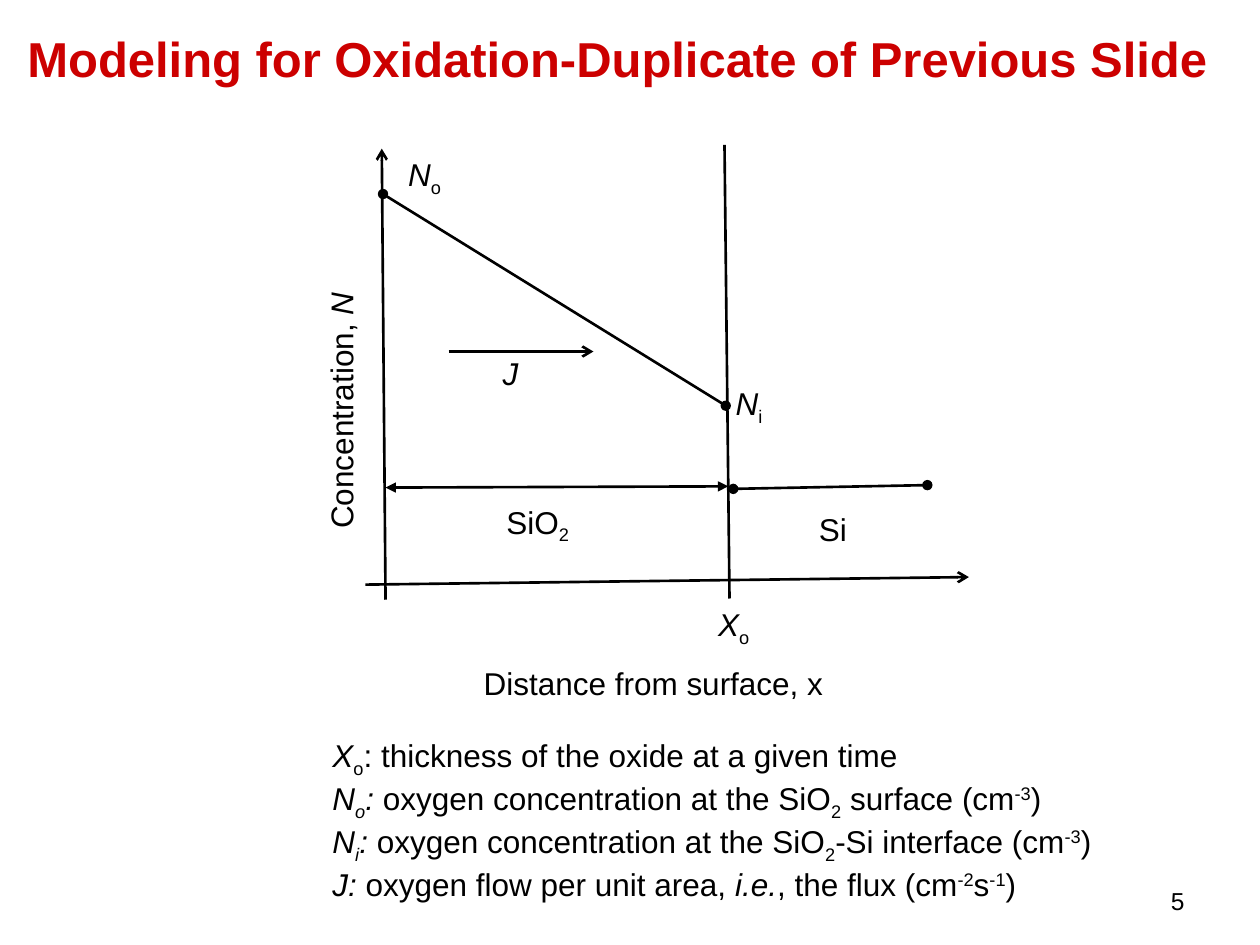
from lxml import etree
from pptx import Presentation
from pptx.dml.color import RGBColor
from pptx.enum import shapes, text
from pptx.oxml import ns
from pptx.util import Inches, Pt

BLACK, RED = "000000", "CC0000"
LEFT, CENTER, RIGHT = text.PP_ALIGN.LEFT, text.PP_ALIGN.CENTER, text.PP_ALIGN.RIGHT
BASELINES = {"_": "-25000", "^": "30000"}

TITLE = [[("Modeling for Oxidation-Duplicate of Previous Slide", "b")]]
PAGE = [[("5", "")]]

LINES = [
    ((2.9, 4.64), (7.69, 4.58), None, "arrow"),
    ((3.06, 4.76), (3.03, 1.18), None, "arrow"),
    ((5.75, 1.15), (5.79, 4.75), None, None),
    ((3.06, 3.87), (5.78, 3.86), "triangle", "triangle"),
    ((5.82, 3.88), (7.36, 3.85), "oval", "oval"),
    ((3.04, 1.54), (5.76, 3.22), "oval", "oval"),
    ((3.56, 2.79), (4.71, 2.79), None, "arrow"),
]

LABELS = [
    ((1.6, 2.99, 2.21, 0.4), [("Concentration, ", ""), ("N", "i")], 270),
    ((3.14, 1.18, 0.51, 0.42), [("N", "i"), ("o", "_")], 0),
    ((5.74, 3, 0.51, 0.42), [("N", "i"), ("i", "_")], 0),
    ((3.92, 3.94, 0.86, 0.4), [("SiO", ""), ("2", "_")], 0),
    ((6.4, 4, 0.49, 0.4), [("Si", "")], 0),
    ((3.89, 2.76, 0.51, 0.42), [("J", "i")], 0),
    ((5.6, 4.75, 0.51, 0.42), [("X", "i"), ("o", "_")], 0),
    ((3.74, 5.22, 3.89, 0.4), [("Distance from surface, x", "")], 0),
]

DEFINITIONS = [
    [("X", "i"), ("o", "_"), (": thickness of the oxide at a given time", "")],
    [("N", "i"), ("o", "i_"), (": ", "i"), ("oxygen concentration at the SiO", ""),
     ("2", "_"), (" surface (cm", ""), ("-3", "^"), (")", "")],
    [("N", "i"), ("i", "i_"), (": ", "i"), ("oxygen concentration at the SiO", ""),
     ("2", "_"), ("-Si interface (cm", ""), ("-3", "^"), (")", "")],
    [("J: ", "i"), ("oxygen flow per unit area, ", ""), ("i.e.", "i"),
     (", the flux (cm", ""), ("-2", "^"), ("s", ""), ("-1", "^"), (")", "")],
]


def rgb(color):
    return RGBColor.from_string(color)


def add_text(s, box, paragraphs, size=18, color=BLACK, align=LEFT,
             anchor=text.MSO_ANCHOR.TOP, rotation=0):
    sp = s.shapes.add_textbox(*map(Inches, box))
    sp.rotation = rotation
    tf = sp.text_frame
    tf.word_wrap = True
    tf.vertical_anchor = anchor
    for i, runs in enumerate(paragraphs):
        p = tf.add_paragraph() if i else tf.paragraphs[0]
        p.alignment = align
        for content, style in runs:
            r = p.add_run()
            r.text = content
            r.font.name = "Arial"
            r.font.size = Pt(size)
            r.font.color.rgb = rgb(color)
            r.font.bold = "b" in style
            r.font.italic = "i" in style
            for mark, offset in BASELINES.items():
                if mark in style:
                    r.font._element.set("baseline", offset)


def add_line(s, start, end, head, tail):
    sp = s.shapes.add_connector(shapes.MSO_CONNECTOR.STRAIGHT,
                                *map(Inches, start + end))
    sp.line.color.rgb = rgb(BLACK)
    sp.line.width = Pt(1.5)
    ln = sp.line._get_or_add_ln()
    for tag, kind in (("a:headEnd", head), ("a:tailEnd", tail)):
        if kind:
            etree.SubElement(ln, ns.qn(tag), type=kind)
    etree.SubElement(sp._element.spPr, ns.qn("a:effectLst"))


def main():
    prs = Presentation()
    prs.slide_width, prs.slide_height = Inches(10), Inches(7.5)
    s = prs.slides.add_slide(prs.slide_layouts[6])
    add_text(s, (0, 0.18, 9.8, 0.57), TITLE, 28, RED, CENTER)
    add_text(s, (7.17, 6.95, 2.33, 0.4), PAGE, 14, align=RIGHT,
             anchor=text.MSO_ANCHOR.MIDDLE)
    for line in LINES:
        add_line(s, *line)
    for box, runs, rotation in LABELS:
        add_text(s, box, [runs], rotation=rotation)
    add_text(s, (2.54, 5.79, 6.32, 1.31), DEFINITIONS)
    prs.save("out.pptx")


if __name__ == "__main__":
    main()
